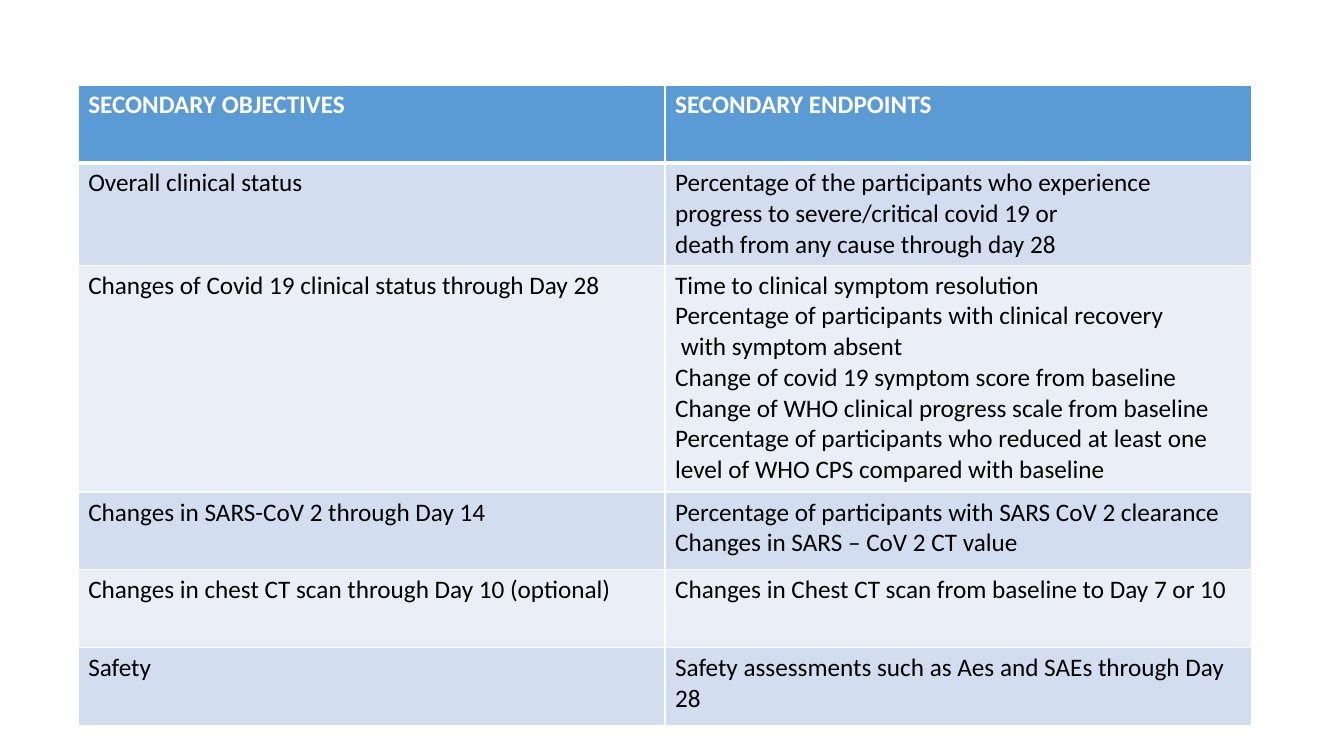
"""Build a slide with a table of secondary objectives and endpoints."""
from dataclasses import dataclass

from lxml.etree import SubElement as Sub
from pptx import Presentation as Deck
from pptx.dml.color import RGBColor as Rgb
from pptx.oxml.ns import qn
from pptx.util import Cm, Pt

HEAD = ("SECONDARY OBJECTIVES", ["SECONDARY ENDPOINTS"])
GOALS = [
    ("Overall clinical status", [
        "Percentage of the participants who experience progress to severe/critical covid 19 or",
        "death from any cause through day 28",
    ]),
    ("Changes of Covid 19 clinical status through Day 28", [
        "Time to clinical symptom resolution",
        "Percentage of participants with clinical recovery",
        " with symptom absent",
        "Change of covid 19 symptom score from baseline",
        "Change of WHO clinical progress scale from baseline",
        "Percentage of participants who reduced at least one level of WHO CPS compared with baseline",
    ]),
    ("Changes in SARS-CoV 2 through Day 14", [
        "Percentage of participants with SARS CoV 2 clearance",
        "Changes in SARS – CoV 2 CT value",
    ]),
    ("Changes in chest CT scan through Day 10 (optional)", [
        "Changes in Chest CT scan from baseline to Day 7 or 10",
    ]),
    ("Safety", ["Safety assessments such as Aes and SAEs through Day 28"]),
]
PAGE = (33.87, 19.05)
LEFT, TOP, WIDE = 1.97, 2.14, 29.58
ROW, TALL = 1.96, 5.72


@dataclass(frozen=True)
class Theme:
    """Colours, font and sizes."""
    head: str = "5B9BD5"
    bands: tuple = ("D2DEEF", "EAEFF7")
    light: str = "FFFFFF"
    dark: str = "000000"
    font: str = "Calibri"
    size: int = 18
    thin: int = 1
    thick: int = 3


LOOK = Theme()


def edge(cell, row):
    """Draw the four borders of a cell."""
    props = cell._tc.get_or_add_tcPr()
    wide = {"L": LOOK.thin, "R": LOOK.thin,
            "T": LOOK.thick if row == 1 else LOOK.thin,
            "B": LOOK.thick if row == 0 else LOOK.thin}
    for spot, (side, width) in enumerate(wide.items()):
        line = Sub(props, qn(f"a:ln{side}"), w=str(Pt(width)))
        Sub(Sub(line, qn("a:solidFill")), qn("a:srgbClr"), val=LOOK.light)
        props.insert(spot, line)


def write(cell, lines, row):
    """Fill a cell with paragraphs in the style of its row."""
    top = row == 0
    cell.fill.solid()
    cell.fill.fore_color.rgb = Rgb.from_string(
        LOOK.head if top else LOOK.bands[(row - 1) % 2])
    style = {"name": LOOK.font, "size": Pt(LOOK.size), "bold": top}
    frame = cell.text_frame
    for num, text in enumerate(lines):
        para = frame.add_paragraph() if num else frame.paragraphs[0]
        run = para.add_run()
        run.text = text
        for key, value in style.items():
            setattr(run.font, key, value)
        run.font.color.rgb = Rgb.from_string(LOOK.light if top else LOOK.dark)
    edge(cell, row)


def main():
    """Make the deck and save it."""
    deck = Deck()
    deck.slide_width, deck.slide_height = map(Cm, PAGE)
    slide = deck.slides.add_slide(deck.slide_layouts[6])
    rows = [HEAD, *GOALS]
    highs = [TALL if len(ends) > 2 else ROW for _, ends in rows]
    table = slide.shapes.add_table(
        len(rows), len(HEAD), Cm(LEFT), Cm(TOP), Cm(WIDE), Cm(sum(highs))).table
    for row, (goal, ends) in enumerate(rows):
        table.rows[row].height = Cm(highs[row])
        for col, lines in enumerate(([goal], ends)):
            write(table.cell(row, col), lines, row)
    deck.save("out.pptx")


if __name__ == "__main__":
    main()
